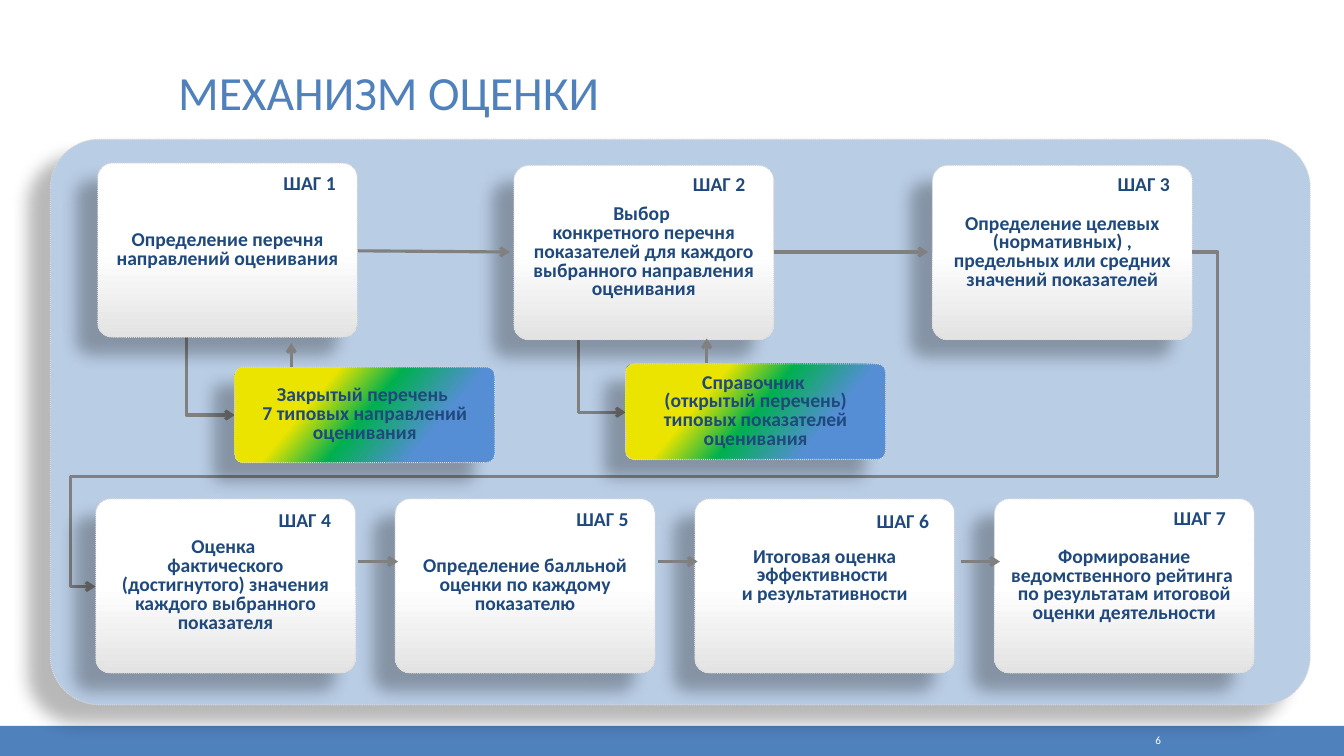
from lxml.etree import SubElement
from pptx import Presentation
from pptx.dml.color import RGBColor
from pptx.enum.dml import MSO_LINE
from pptx.enum.shapes import MSO_CONNECTOR as CONN, MSO_SHAPE as SHAPE
from pptx.enum.text import MSO_ANCHOR as ANCHOR, PP_ALIGN as ALIGN
from pptx.oxml.ns import qn
from pptx.util import Cm, Pt

COLORS = {"accent": "4F81BD", "panel": "B9CDE5", "text": "1F497D", "border": "D9D9D9",
          "arrow": "808080", "white": "FFFFFF", "shadow": "000000"}
CARD_FILL = ([(0, "FFFFFF"), (50, "FFFFFF"), (100, "E3E3E3")], 270)
LIST_FILL = ([(26, "558ED5"), (50, "00B050"), (69, "EAE400")], 140)
CARD_W, CARD_H, LIST_H = 6.55, 4.39, 2.41

TOP_STEPS = [
    (2.46, 4.11, 4.06, 0, "Определение перечня направлений оценивания"),
    (12.95, 4.17, 3.89, -0.05, "Выбор \vконкретного перечня показателей для каждого "
                               "выбранного направления оценивания"),
    (23.5, 4.17, 4.04, -0.05, "Определение целевых (нормативных) , предельных или "
                              "средних значений показателей"),
]
BOTTOM_STEPS = [
    (3.99, 0.03, "Оценка \vфактического (достигнутого) значения каждого выбранного показателя"),
    (3.94, 0, "Определение балльной оценки по каждому показателю"),
    (3.96, 0.05, "Итоговая оценка эффективности \vи результативности"),
    (3.89, -0.03, "Формирование ведомственного рейтинга \vпо результатам итоговой "
                  "оценки деятельности"),
]
LISTS = [
    (15.77, 9.17, "Справочник \v(открытый перечень) типовых показателей оценивания"),
    (5.92, 9.25, "Закрытый перечень \v7 типовых направлений оценивания"),
]
ARROWS = [(9.02, 6.32, 12.85, 6.35), (19.51, 6.35, 23.39, 6.35),
          (9.02, 14.15, 10.03, 14.15), (16.59, 14.15, 17.58, 14.15),
          (24.21, 14.15, 25.2, 14.15),
          (7.34, 9.25, 7.34, 8.64), (17.81, 9.14, 17.81, 8.53)]


def rgb(name):
    """Return the palette colour with the given name."""
    return RGBColor.from_string(COLORS[name])


def write(sp, text, size, color, align, anchor=ANCHOR.MIDDLE, spacing=1.0, bold=False):
    """Put formatted text into a shape."""
    tf = sp.text_frame
    tf.word_wrap = True
    tf.vertical_anchor = anchor
    tf.text = text
    p = tf.paragraphs[0]
    p.alignment, p.line_spacing = align, spacing
    for r in p.runs:
        r.font.name, r.font.size, r.font.bold = "Calibri", Pt(size), bold
        r.font.color.rgb = rgb(color)


def write_step(sp, text):
    """Put centred bold text into a box of the scheme."""
    write(sp, text, 14, "text", ALIGN.CENTER, spacing=0.8, bold=True)


def add_text(s, x, y, w, h, *args, **kwargs):
    """Add a text box."""
    write(s.shapes.add_textbox(Cm(x), Cm(y), Cm(w), Cm(h)), *args, **kwargs)


def add_box(s, x, y, w, h, gradient=None):
    """Add a rounded box with a dotted border and a soft shadow."""
    sp = s.shapes.add_shape(SHAPE.ROUNDED_RECTANGLE, Cm(x), Cm(y), Cm(w), Cm(h))
    sp.adjustments[0] = 0.086
    if gradient:
        stops, angle = gradient
        sp.fill.gradient()
        sp.fill.gradient_angle = angle
        gs_list = sp._element.spPr.find(".//" + qn("a:gsLst"))
        gs_list[:] = []
        for pos, color in stops:
            gs = SubElement(gs_list, qn("a:gs"), pos=str(pos * 1000))
            SubElement(gs, qn("a:srgbClr"), val=color)
    else:
        sp.fill.solid()
        sp.fill.fore_color.rgb = rgb("panel")
    sp.line.color.rgb = rgb("border")
    sp.line.width = Pt(0.75)
    sp.line.dash_style = MSO_LINE.ROUND_DOT
    sp.shadow.inherit = False
    effects = sp._element.spPr.find(qn("a:effectLst"))
    shadow = SubElement(effects, qn("a:outerShdw"), blurRad=str(Pt(11.8)), dist=str(Pt(19.7)),
                        dir=str(141 * 60000), algn="ctr", rotWithShape="0")
    color = SubElement(shadow, qn("a:srgbClr"), val=COLORS["shadow"])
    SubElement(color, qn("a:alpha"), val="28000")
    return sp


def add_step(s, x, y, number, dx, dy, text):
    """Add a step card with its number in the upper right corner."""
    sp = add_box(s, x, y, CARD_W, CARD_H, CARD_FILL)
    write_step(sp, text)
    label = s.shapes.add_textbox(Cm(x + dx), Cm(y + dy), Cm(2.57), Cm(1.12))
    write_step(label, f"ШАГ {number}")
    return sp


def add_arrow(s, x1, y1, x2, y2, kind=CONN.STRAIGHT):
    """Add a grey connector with an arrowhead at its end."""
    c = s.shapes.add_connector(kind, Cm(x1), Cm(y1), Cm(x2), Cm(y2))
    c.line.color.rgb = rgb("arrow")
    c.line.width = Pt(2.25)
    SubElement(c.line._get_or_add_ln(), qn("a:tailEnd"), type="arrow")
    SubElement(c._element.spPr, qn("a:effectLst"))
    return c


def set_bend(c, preset, adjustments=()):
    """Choose the bend of an elbow connector."""
    geom = c._element.spPr.find(qn("a:prstGeom"))
    geom.set("prst", preset)
    guides = geom.find(qn("a:avLst"))
    for i, value in enumerate(adjustments, 1):
        SubElement(guides, qn("a:gd"), name=f"adj{i}", fmla=f"val {value}")


def add_corner_arrow(s, x1, y1, x2, y2):
    """Add an arrow that runs down and then right."""
    cx, cy = (x1 + x2) / 2, (y1 + y2) / 2
    half_w, half_h = (y2 - y1) / 2, (x2 - x1) / 2
    c = add_arrow(s, cx + half_w, cy - half_h, cx - half_w, cy + half_h, CONN.ELBOW)
    set_bend(c, "bentConnector2")
    c._element.spPr.find(qn("a:xfrm")).set("rot", str(270 * 60000))


def add_footer(s, x, y, w, h):
    """Add the bottom band with the page number."""
    sp = s.shapes.add_shape(SHAPE.RECTANGLE, Cm(x), Cm(y), Cm(w), Cm(h))
    sp.fill.solid()
    sp.fill.fore_color.rgb = rgb("accent")
    sp.line.fill.background()
    sp.shadow.inherit = False
    add_text(s, x + 27.48, y + 0.05, 2.03, 0.64, "6", 8, "white", ALIGN.RIGHT)


def add_scheme(s, x, y, w, h):
    """Add the panel with seven steps, two lists and their arrows."""
    add_box(s, x, y, w, h)
    add_corner_arrow(s, 14.58, 7.14, 15.77, 10.39)
    add_corner_arrow(s, 4.7, 7.04, 5.92, 10.46)
    for i, (left, top, dx, dy, text) in enumerate(TOP_STEPS, 1):
        add_step(s, left, top, i, dx, dy, text)
    c = add_arrow(s, 30.05, 6.35, 2.41, 14.78, CONN.ELBOW)
    set_bend(c, "bentConnector5", (-2300, 67200, 102300))
    for left, top, text in LISTS:
        write_step(add_box(s, left, top, CARD_W, LIST_H, LIST_FILL), text)
    cards = [add_step(s, x + 1.14 + 7.55 * i, y + 9.06, i + 4, *step)
             for i, step in enumerate(BOTTOM_STEPS)]
    cards[2].text_frame.margin_bottom = Cm(0.61)
    for ends in ARROWS:
        add_arrow(s, *ends)


def main():
    """Build and save the slide."""
    prs = Presentation()
    prs.slide_width, prs.slide_height = Cm(33.87), Cm(19.05)
    s = prs.slides.add_slide(prs.slide_layouts[6])
    add_footer(s, 0, 18.29, 33.87, 0.76)
    add_text(s, 4.24, 0, 25.4, 3.18, "МЕХАНИЗМ ОЦЕНКИ", 34, "accent", ALIGN.LEFT,
             ANCHOR.BOTTOM, 0.9)
    add_scheme(s, 1.27, 3.51, 31.75, 14.25)
    prs.save("out.pptx")


if __name__ == "__main__":
    main()
